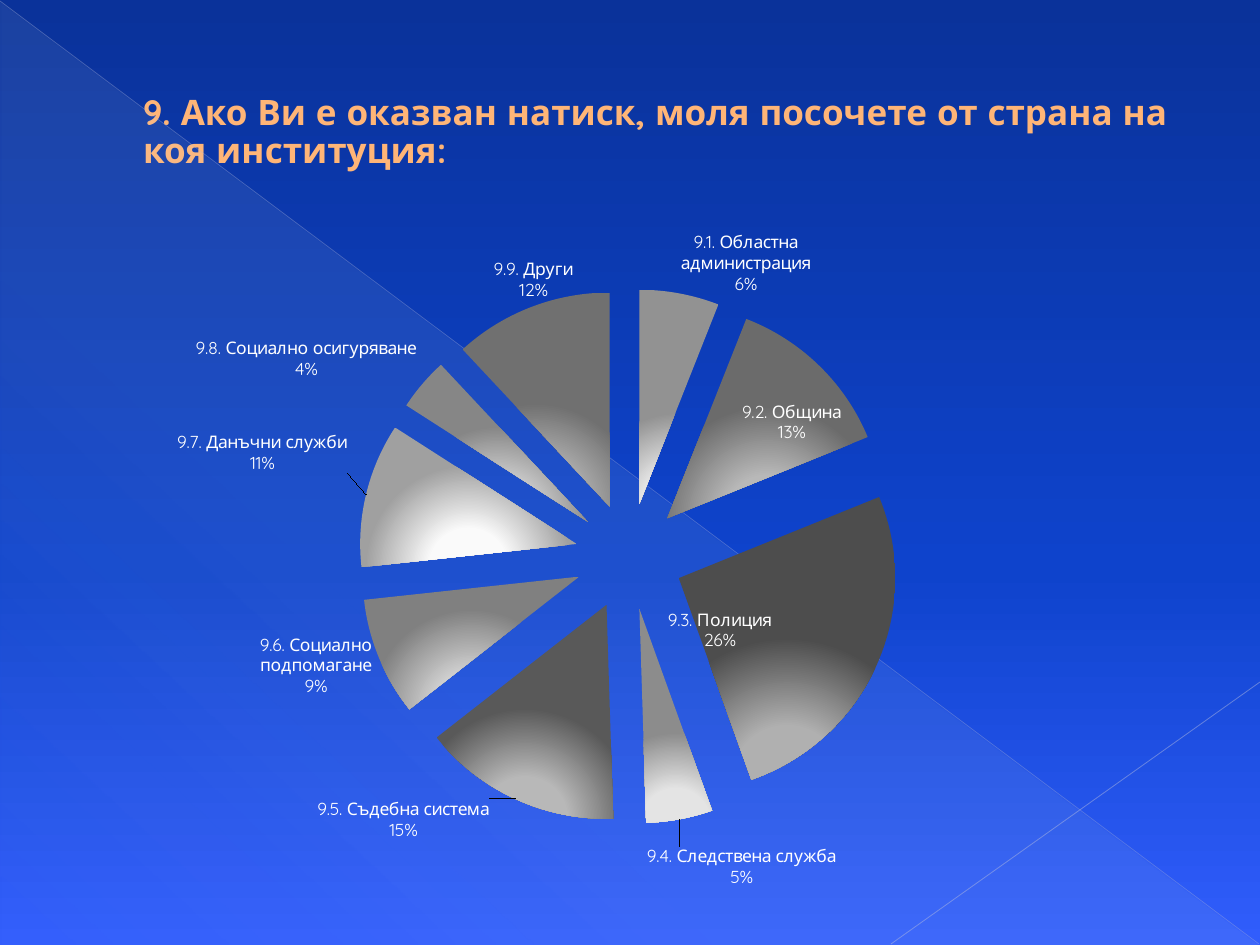
from dataclasses import dataclass

from pptx import Presentation
from pptx.chart.data import CategoryChartData
from pptx.dml.color import RGBColor as RGB
from pptx.enum.chart import XL_CHART_TYPE as CHART, XL_LABEL_POSITION as LABEL
from pptx.enum.shapes import MSO_CONNECTOR as CONN, MSO_SHAPE as SHAPE
from pptx.enum.text import MSO_ANCHOR as ANCHOR, MSO_AUTO_SIZE as AUTO, PP_ALIGN as ALIGN
from pptx.oxml import parse_xml
from pptx.oxml.ns import nsdecls, qn
from pptx.util import Emu, Pt


@dataclass(frozen=True)
class Theme:
    font: str = "Quicksand"
    title: str = "FFB577"
    label: str = "FFFFFF"
    title_size: int = 20
    label_size: int = 10
    back: tuple = ((0, "0A329A", 100), (60, "0E43CC", 100), (100, "315DFC", 100))
    veil: tuple = ((0, "CCDDEA", 10), (70, "CCDDEA", 8), (100, "CCDDEA", 1))


THEME = Theme()
W, H = 1260, 945
TITLE = "9.\u00a0Ако Ви е оказван натиск, моля посочете от страна на коя институция:"
SLICES = [
    ("9.1. Областна администрация", 6, "E8E8E8", "929292", None),
    ("9.2. Община", 13, "B8B8B8", "6B6B6B", None),
    ("9.3. Полиция", 26, "B0B0B0", "4D4D4D", (-214, -57)),
    ("9.4. Следствена служба", 5, "E4E4E4", "8C8C8C", (-38, 22)),
    ("9.5. Съдебна система", 15, "B8B8B8", "595959", (-19, -5)),
    ("9.6. Социално подпомагане", 9, "D0D0D0", "808080", (-4, -28)),
    ("9.7. Данъчни служби", 11, "FAFAFA", "A0A0A0", (-7, -23)),
    ("9.8. Социално осигуряване", 4, "D8D8D8", "868686", None),
    ("9.9. Други", 12, "B8B8B8", "707070", (40, 0)),
]


def px(n):
    return Emu(round(n * 914400 / 126))


def box_emu(box):
    return [px(n) for n in box]


def apply(obj, values):
    for name, value in values.items():
        setattr(obj, name, value)


def set_gradient(fill, owner, stops, shade):
    fill.gradient()
    grad = owner.find(".//" + qn("a:gradFill"))
    for child in list(grad):
        grad.remove(child)
    items = "".join(
        f'<a:gs pos="{pos * 1000}"><a:srgbClr val="{color}">'
        f'<a:alpha val="{alpha * 1000}"/></a:srgbClr></a:gs>'
        for pos, color, alpha in stops
    )
    grad.append(parse_xml(f'<a:gsLst {nsdecls("a")}>{items}</a:gsLst>'))
    grad.append(parse_xml(shade))


def linear(angle):
    return f'<a:lin {nsdecls("a")} ang="{angle * 60000}" scaled="0"/>'


def radial():
    return (f'<a:path {nsdecls("a")} path="circle">'
            '<a:fillToRect l="50000" t="100000" r="50000" b="0"/></a:path>')


def add_ray(slide, ends, color, width, alpha):
    s = slide.shapes.add_connector(CONN.STRAIGHT, *box_emu(ends))
    s.line.width = Pt(width)
    s.line.color.rgb = RGB.from_string(color)
    clr = s.element.find(".//" + qn("a:srgbClr"))
    clr.append(parse_xml(f'<a:alpha {nsdecls("a")} val="{alpha * 1000}"/>'))
    s.element.spPr.append(parse_xml(f'<a:effectLst {nsdecls("a")}/>'))


def add_backdrop(slide, box):
    x, y, w, h = box
    set_gradient(slide.background.fill, slide.element, THEME.back, linear(90))
    s = slide.shapes.add_shape(
        SHAPE.RIGHT_TRIANGLE, *box_emu((x + 1, y + 2, w - 2, h - 2)))
    s.shadow.inherit = False
    s.line.fill.background()
    set_gradient(s.fill, s.element, THEME.veil, linear(133))
    add_ray(slide, (x, y + 1, x + w - 1, y + h - 1), "ADB6DC", 0.39, 35)
    add_ray(slide, (x + w, y + 682, x + 891, y + h - 1), "B7BEDF", 0.47, 45)


def add_title(slide, box):
    s = slide.shapes.title
    apply(s, dict(zip(("left", "top", "width", "height"), box_emu(box))))
    tf = s.text_frame
    apply(tf, {"text": TITLE, "word_wrap": True, "auto_size": AUTO.NONE,
               "vertical_anchor": ANCHOR.MIDDLE})
    p = tf.paragraphs[0]
    apply(p, {"alignment": ALIGN.LEFT, "line_spacing": 0.9})
    pPr = p.runs[0].font
    apply(pPr, {"name": THEME.font, "size": Pt(THEME.title_size), "bold": True})
    pPr.color.rgb = RGB.from_string(THEME.title)
    tf.margin_left = px(80)


def layout_xml(values, target=""):
    items = "".join(f'<c:{k} val="{v}"/>' for k, v in values.items())
    return (f'<c:layout {nsdecls("c")}><c:manualLayout>{target}{items}'
            '</c:manualLayout></c:layout>')


def label_xml(idx, x, y):
    shows = "".join(
        f'<c:show{name} val="{on}"/>' for name, on in
        (("LegendKey", 0), ("Val", 0), ("CatName", 1), ("SerName", 0),
         ("Percent", 1), ("BubbleSize", 0)))
    return (f'<c:dLbl {nsdecls("c")}><c:idx val="{idx}"/>'
            f'{layout_xml({"x": x, "y": y})}<c:dLblPos val="bestFit"/>'
            f'{shows}<c:separator>\n</c:separator></c:dLbl>')


def add_pie(slide, box):
    data = CategoryChartData()
    data.categories = [row[0] for row in SLICES]
    data.add_series("Series 1", [row[1] for row in SLICES])
    chart = slide.shapes.add_chart(CHART.PIE, *box_emu(box), data).chart
    apply(chart, {"has_legend": False, "has_title": False})
    apply(chart.font, {"name": THEME.font, "size": Pt(THEME.label_size)})
    chart.font.color.rgb = RGB.from_string(THEME.label)

    area = chart.element.find(".//" + qn("c:plotArea"))
    for old in area.findall(qn("c:layout")):
        area.remove(old)
    area.insert(0, parse_xml(layout_xml(
        {"xMode": "edge", "yMode": "edge", "x": 0.079, "y": 0.087, "w": 0.841, "h": 0.814},
        '<c:layoutTarget val="inner"/>')))

    plot = chart.plots[0]
    plot.vary_by_categories = True
    series = plot.series[0]
    labels = series.data_labels
    apply(labels, {"show_category_name": True, "show_percentage": True,
                   "show_value": False, "position": LABEL.BEST_FIT})
    ser = area.find(".//" + qn("c:ser"))
    dLbls = ser.find(qn("c:dLbls"))
    dLbls.find(qn("c:showBubbleSize")).addnext(
        parse_xml(f'<c:separator {nsdecls("c")}>\n</c:separator>'))

    moved = 0
    for i, (_, _, inner, outer, shift) in enumerate(SLICES):
        fill = series.points[i].format.fill
        dPt = ser.findall(qn("c:dPt"))[i]
        set_gradient(fill, dPt, ((0, inner, 100), (30, inner, 100),
                                 (80, outer, 100), (100, outer, 100)), radial())
        if shift:
            x, y = round(shift[0] / box[2], 2), round(shift[1] / box[3], 2)
            dLbls.insert(moved, parse_xml(label_xml(i, x, y)))
            moved += 1
    ser.find(qn("c:dPt")).addprevious(
        parse_xml(f'<c:explosion {nsdecls("c")} val="25"/>'))


def main():
    prs = Presentation()
    prs.slide_width, prs.slide_height = px(W), px(H)
    slide = prs.slides.add_slide(prs.slide_layouts[5])
    add_backdrop(slide, (0, 0, W, H))
    add_title(slide, (63, 37, 1134, 193))
    add_pie(slide, (63, 224, 1134, 665))
    prs.save("out.pptx")


if __name__ == "__main__":
    main()
